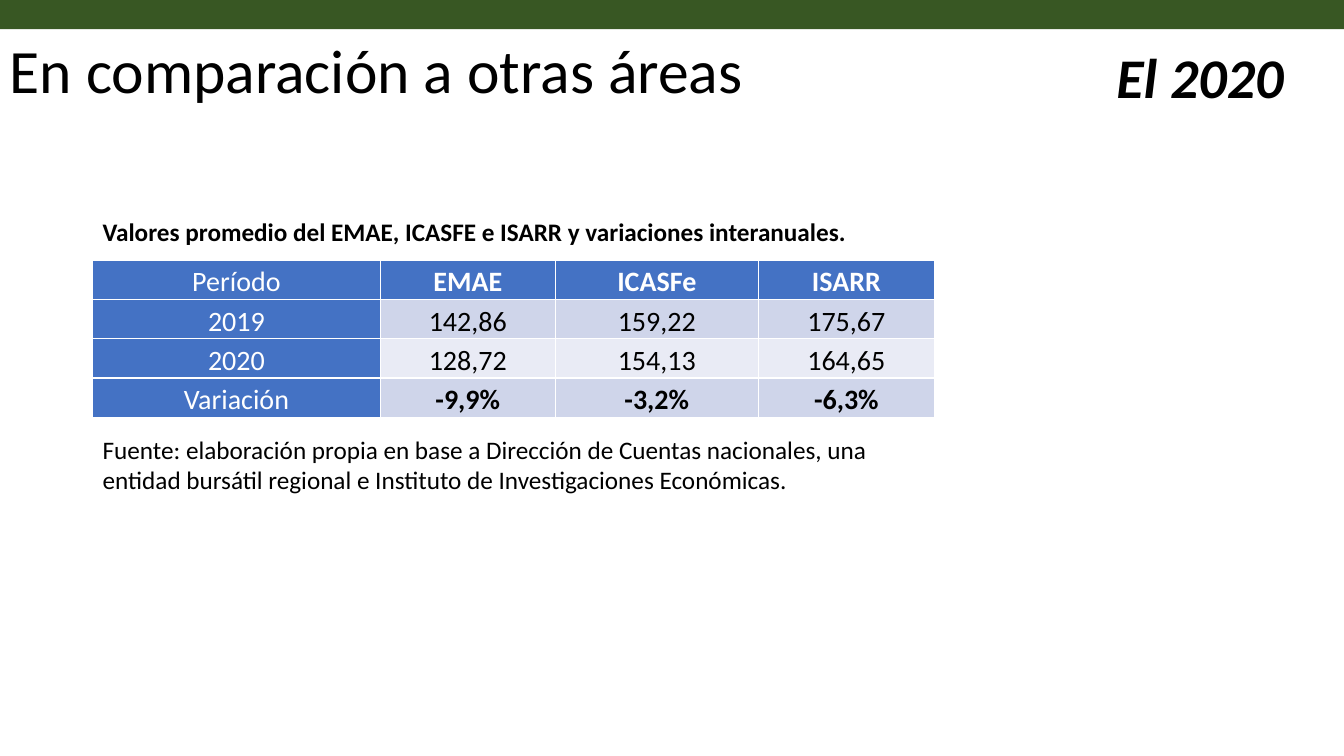
from lxml.etree import SubElement
from pptx import Presentation
from pptx.dml.color import RGBColor
from pptx.enum.shapes import MSO_SHAPE
from pptx.enum.text import MSO_ANCHOR, PP_ALIGN
from pptx.oxml.ns import qn
from pptx.util import Inches, Pt

FONT = "Calibri"
GREEN = RGBColor(0x38, 0x57, 0x23)
BLUE = RGBColor(0x44, 0x72, 0xC4)
BAND_DARK = RGBColor(0xCF, 0xD5, 0xEA)
BAND_LIGHT = RGBColor(0xE9, 0xEB, 0xF5)
WHITE = RGBColor(0xFF, 0xFF, 0xFF)
BLACK = RGBColor(0, 0, 0)

COLUMN_WIDTHS = (2.85, 1.74, 2.01, 1.75)
INDICATORS = (
    ("Período", "EMAE", "ICASFe", "ISARR"),
    ("2019", "142,86", "159,22", "175,67"),
    ("2020", "128,72", "154,13", "164,65"),
    ("Variación", "-9,9%", "-3,2%", "-6,3%"),
)


def write(frame, text, size, color=BLACK, bold=False, italic=False,
          align=PP_ALIGN.LEFT, spacing=1.0):
    """Fill a text frame with one formatted paragraph."""
    frame.word_wrap = True
    frame.text = text
    paragraph = frame.paragraphs[0]
    paragraph.alignment = align
    paragraph.line_spacing = spacing
    font = paragraph.runs[0].font
    font.name, font.size = FONT, Pt(size)
    font.bold, font.italic = bold, italic
    font.color.rgb = color


def add_block(slide, box, fill):
    """Add a plain filled rectangle in the given box."""
    block = slide.shapes.add_shape(MSO_SHAPE.RECTANGLE, *map(Inches, box))
    block.shadow.inherit = False
    block.fill.solid()
    block.fill.fore_color.rgb = fill
    block.line.fill.background()
    return block


def add_text(slide, box, text, size, anchor=MSO_ANCHOR.TOP, **style):
    """Add a text box in the given box."""
    frame = slide.shapes.add_textbox(*map(Inches, box)).text_frame
    write(frame, text, size, **style)
    frame.vertical_anchor = anchor


def add_borders(cell):
    """Draw thin white borders on all sides of a cell."""
    properties = cell._tc.get_or_add_tcPr()
    for index, side in enumerate(("a:lnL", "a:lnR", "a:lnT", "a:lnB")):
        border = SubElement(properties, qn(side), w=str(Pt(1)))
        fill = SubElement(border, qn("a:solidFill"))
        SubElement(fill, qn("a:srgbClr"), val=str(WHITE))
        properties.insert(index, border)


def add_header(slide, left, top, width):
    """Place the green band, the title and the year label."""
    add_block(slide, (left, top, width, 0.29), GREEN)
    add_text(slide, (left, top, 11.5, 1.45), "En comparación a otras áreas", 44,
             anchor=MSO_ANCHOR.MIDDLE, spacing=0.9)
    year = add_block(slide, (left + width - 4.46, top + 0.45, 3.96, 0.68), WHITE)
    write(year.text_frame, "El 2020", 40, bold=True, italic=True,
          align=PP_ALIGN.RIGHT, spacing=0.9)
    year.text_frame.vertical_anchor = MSO_ANCHOR.TOP


def add_indicators(slide, left, top, width, height):
    """Place the table of indicators and their yearly variation."""
    table = slide.shapes.add_table(
        len(INDICATORS), len(COLUMN_WIDTHS),
        *map(Inches, (left, top, width, height))).table
    for column, column_width in zip(table.columns, COLUMN_WIDTHS):
        column.width = Inches(column_width)
    for r, values in enumerate(INDICATORS):
        for c, value in enumerate(values):
            cell = table.cell(r, c)
            heading = r == 0 or c == 0
            band = BAND_DARK if r % 2 else BAND_LIGHT
            cell.fill.solid()
            cell.fill.fore_color.rgb = BLUE if heading else band
            cell.margin_left = cell.margin_right = Inches(0.05)
            cell.margin_top = cell.margin_bottom = 0
            cell.vertical_anchor = MSO_ANCHOR.MIDDLE
            write(cell.text_frame, value, 20, WHITE if heading else BLACK,
                  bold=c > 0 and r in (0, len(INDICATORS) - 1),
                  align=PP_ALIGN.CENTER, spacing=1.15)
            add_borders(cell)


def add_comparison(slide, left, top, width):
    """Place the caption, the table and the source note."""
    add_text(slide, (left, top, 7.77, 0.4),
             "Valores promedio del EMAE, ICASFE e ISARR y variaciones interanuales.",
             18, bold=True)
    add_indicators(slide, left, top + 0.48, width, 1.56)
    add_text(slide, (left, top + 2.16, width, 0.71),
             "Fuente: elaboración propia en base a Dirección de Cuentas nacionales, "
             "una entidad bursátil regional e Instituto de Investigaciones Económicas.",
             18)


def main():
    """Build and save the slide."""
    presentation = Presentation()
    presentation.slide_width = Inches(13.33)
    presentation.slide_height = Inches(7.5)
    slide = presentation.slides.add_slide(presentation.slide_layouts[6])
    add_header(slide, 0, 0, 13.33)
    add_comparison(slide, 0.92, 2.1, 8.36)
    presentation.save("out.pptx")


if __name__ == "__main__":
    main()
